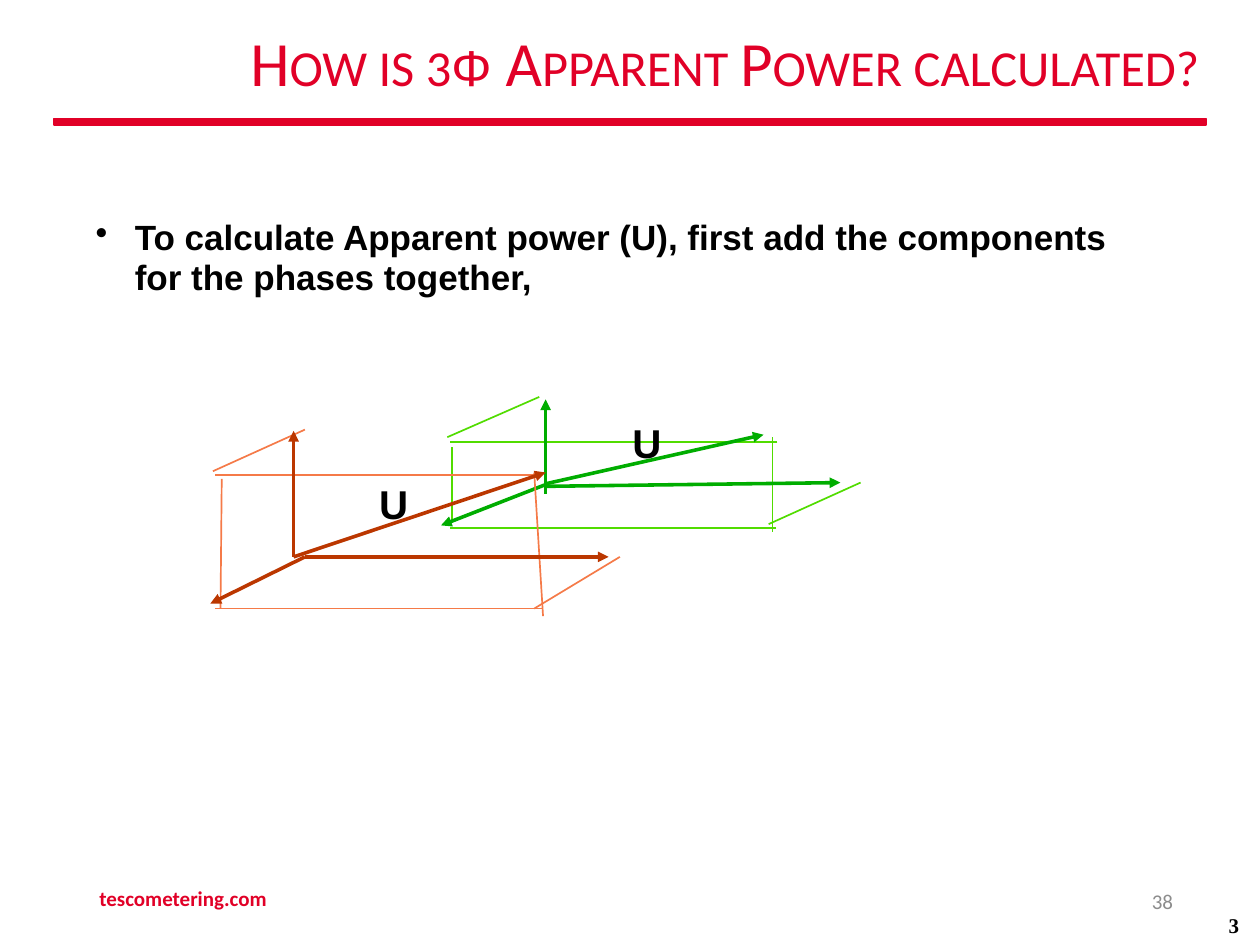
from dataclasses import dataclass

from lxml import etree
from pptx import Presentation
from pptx import util as u
from pptx.dml.color import RGBColor
from pptx.enum import shapes, text
from pptx.oxml.ns import qn

RED = "E10027"
BLACK = "000000"
GRAY = "8C8C8C"


@dataclass
class Run:
    content: str
    size: float
    font: str
    color: str
    bold: bool = False
    small_caps: bool = False


@dataclass
class PowerBox:
    """Component arrows and the guide lines around them, as (x1, y1, x2, y2)."""
    arrow_color: str
    guide_color: str
    arrows: list
    guides: list


GREEN_PHASE = PowerBox(
    "00AD00", "51DC00",
    arrows=[
        (4.33, 3.84, 6.06, 3.45),
        (4.33, 3.86, 6.67, 3.83),
        (4.32, 3.85, 3.5, 4.17),
        (4.33, 3.92, 4.33, 3.17),
    ],
    guides=[
        (3.59, 3.55, 3.59, 4.15),
        (4.28, 3.15, 3.55, 3.47),
        (6.83, 3.83, 6.1, 4.16),
        (6.13, 4.22, 6.13, 3.47),
        (6.17, 3.51, 3.57, 3.51),
        (6.16, 4.19, 3.57, 4.19),
    ],
)
ORANGE_PHASE = PowerBox(
    "BB3700", "F57A48",
    arrows=[
        (2.33, 4.42, 4.33, 3.75),
        (2.42, 4.42, 4.83, 4.42),
        (2.42, 4.42, 1.67, 4.79),
        (2.33, 4.42, 2.33, 3.42),
    ],
    guides=[
        (1.76, 3.8, 1.75, 4.83),
        (2.42, 3.41, 1.69, 3.74),
        (4.92, 4.42, 4.24, 4.83),
        (4.31, 4.89, 4.24, 3.75),
        (4.3, 3.77, 1.71, 3.77),
        (4.3, 4.83, 1.71, 4.83),
    ],
)


def rgb(color: str) -> RGBColor:
    return RGBColor.from_string(color)


def add_run(paragraph, item: Run) -> None:
    run = paragraph.add_run()
    run.text = item.content
    font = run.font
    font.size = u.Pt(item.size)
    font.name = item.font
    font.bold = item.bold
    font.color.rgb = rgb(item.color)
    if item.small_caps:
        run._r.get_or_add_rPr().set("cap", "small")


def set_frame(shape, insets=(0, 0, 0, 0), anchor=text.MSO_ANCHOR.TOP):
    """Set wrapping, insets (left, top, right, bottom) and anchor."""
    frame = shape.text_frame
    frame.word_wrap = True
    frame.auto_size = text.MSO_AUTO_SIZE.NONE
    frame.vertical_anchor = anchor
    (frame.margin_left, frame.margin_top,
     frame.margin_right, frame.margin_bottom) = map(u.Inches, insets)
    return frame


def add_text_box(slide, left: float, top: float, width: float, height: float, **options):
    box = slide.shapes.add_textbox(*map(u.Inches, (left, top, width, height)))
    return set_frame(box, **options)


def add_line(slide, ends: tuple, color: str, width: float, arrow: bool = False) -> None:
    connector = slide.shapes.add_connector(
        shapes.MSO_CONNECTOR.STRAIGHT, *map(u.Inches, ends))
    connector.line.color.rgb = rgb(color)
    connector.line.width = u.Pt(width)
    if arrow:
        etree.SubElement(connector.line._get_or_add_ln(), qn("a:tailEnd"), type="triangle")
    etree.SubElement(connector._element.spPr, qn("a:effectLst"))


def add_power_box(slide, phase: PowerBox) -> None:
    for ends in phase.guides:
        add_line(slide, ends, phase.guide_color, 0.96)
    for ends in phase.arrows:
        add_line(slide, ends, phase.arrow_color, 2.04, arrow=True)


def add_title(slide) -> None:
    title = slide.shapes.title
    title.left, title.top, title.width, title.height = map(
        u.Inches, (1.67, 0.17, 7.85, 0.62))
    frame = set_frame(title, insets=(0, 0.01, 0, 0), anchor=text.MSO_ANCHOR.MIDDLE)
    paragraph = frame.paragraphs[0]
    paragraph.alignment = text.PP_ALIGN.RIGHT
    for content, font in (("How is 3", "Calibri"), ("ϕ ", "Arial"),
                          ("Apparent Power calculated?", "Calibri")):
        add_run(paragraph, Run(content, 36, font, RED, small_caps=True))


def add_rule(slide) -> None:
    rule = slide.shapes.add_shape(
        shapes.MSO_SHAPE.RECTANGLE, *map(u.Inches, (0.43, 0.94, 9.14, 0.05)))
    rule.shadow.inherit = False
    rule.fill.solid()
    rule.fill.fore_color.rgb = rgb(RED)
    rule.line.color.rgb = rgb(RED)
    rule.line.width = u.Pt(1)


def add_body(slide) -> None:
    paragraph = add_text_box(slide, 0.74, 1.69, 8.1, 0.68,
                             insets=(0, 0.04, 0, 0)).paragraphs[0]
    paragraph.line_spacing = u.Pt(22.8)
    properties = paragraph._p.get_or_add_pPr()
    properties.set("marL", str(u.Inches(0.33)))
    properties.set("indent", str(u.Inches(-0.31)))
    etree.SubElement(properties, qn("a:buChar"), char="•")
    add_run(paragraph, Run(
        "To calculate Apparent power (U), first add the components "
        "for the phases together,", 20, "Arial", BLACK, bold=True))


def add_power_labels(slide) -> None:
    frame = add_text_box(slide, 3.01, 3.18, 2.25, 1, insets=(0, 0.14, 0, 0))
    upper, lower = frame.paragraphs[0], frame.add_paragraph()
    upper._p.get_or_add_pPr().set("marL", str(u.Inches(2.01)))
    lower.space_before = u.Pt(7.4)
    for paragraph in (upper, lower):
        add_run(paragraph, Run("U", 23, "Arial", BLACK, bold=True))


def add_footer(slide) -> None:
    middle = text.MSO_ANCHOR.MIDDLE
    number = add_text_box(slide, 7.06, 6.95, 2.25, 0.4, anchor=middle).paragraphs[0]
    number.alignment = text.PP_ALIGN.RIGHT
    add_run(number, Run("38", 12, "Calibri", GRAY))
    corner = add_text_box(slide, 9.75, 7.24, 0.11, 0.21).paragraphs[0]
    add_run(corner, Run("3", 12, "Times New Roman", BLACK, bold=True))
    address = add_text_box(slide, 0.69, 6.93, 3.38, 0.4,
                           insets=(0.1, 0.05, 0.1, 0.05), anchor=middle).paragraphs[0]
    add_run(address, Run("tescometering.com", 12, "Calibri", RED, bold=True))


def main() -> None:
    presentation = Presentation()
    presentation.slide_width = u.Inches(10)
    presentation.slide_height = u.Inches(7.5)
    slide = presentation.slides.add_slide(presentation.slide_layouts[5])
    add_rule(slide)
    add_title(slide)
    add_body(slide)
    add_power_box(slide, GREEN_PHASE)
    add_power_box(slide, ORANGE_PHASE)
    add_power_labels(slide)
    add_footer(slide)
    presentation.save("out.pptx")


if __name__ == "__main__":
    main()
